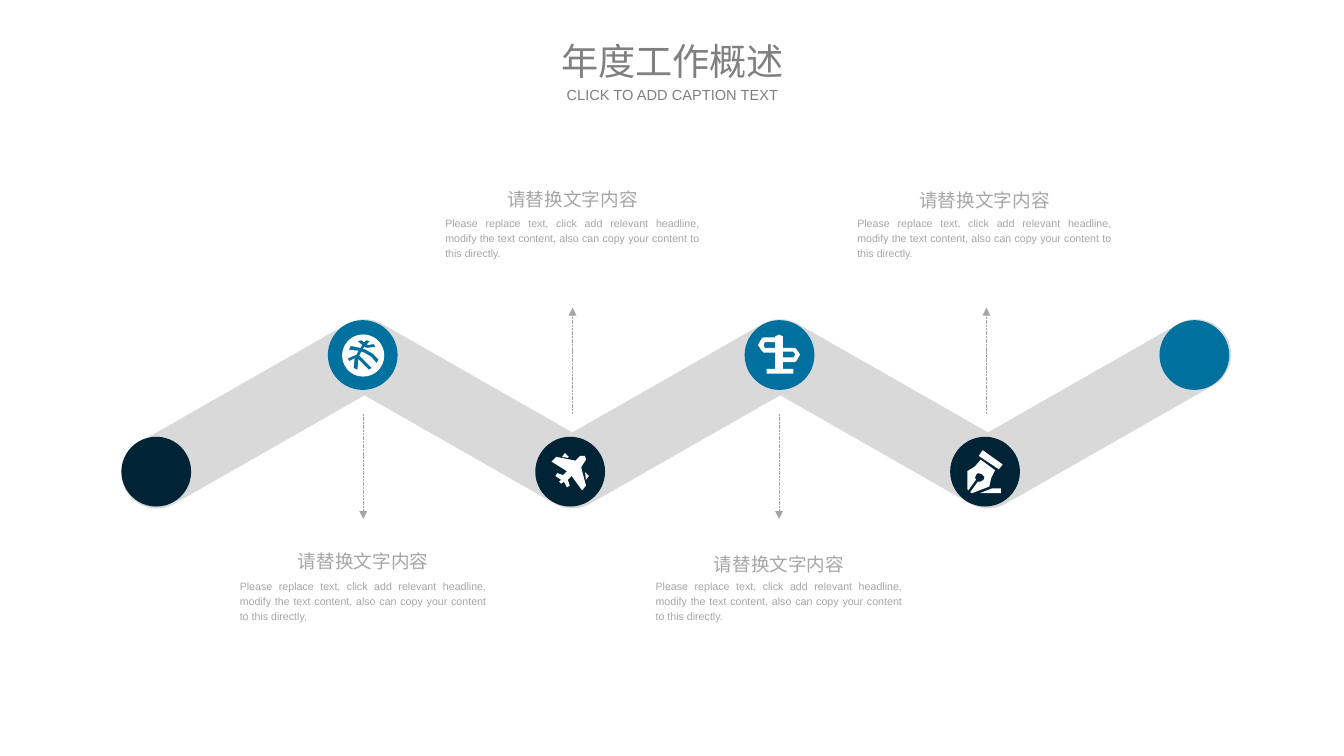
import math

import lxml.etree
import pptx
import pptx.dml.color
import pptx.enum.dml
import pptx.enum.shapes
import pptx.enum.text
import pptx.oxml.ns
import pptx.util

PX = 9144  # EMU per px, 100 px to the inch

RGBColor = pptx.dml.color.RGBColor
NAVY = RGBColor(0x00, 0x24, 0x36)
BLUE = RGBColor(0x00, 0x70, 0x9F)
BAND_GRAY = RGBColor(0xD9, 0xD9, 0xD9)
TEXT_GRAY = RGBColor(0xA6, 0xA6, 0xA6)
TITLE_GRAY = RGBColor(0x80, 0x80, 0x80)
WHITE = RGBColor(0xFF, 0xFF, 0xFF)

CENTER = pptx.enum.text.PP_ALIGN.CENTER
JUSTIFY = pptx.enum.text.PP_ALIGN.JUSTIFY

HEADING = "请替换文字内容"
BODY = ("Please replace text, click add relevant headline, modify the text "
        "content, also can copy your content to this directly.")

# Road: nodes alternate between low and high
FIRST_X, LAST_X, NODES = 164, 1251, 6
LOW_Y, HIGH_Y, RADIUS = 495, 371, 37

# Discs: left, top, colour
DISC = 73
DISCS = [(127, 457, NAVY), (343, 335, BLUE), (560, 457, NAVY),
         (779, 335, BLUE), (994, 457, NAVY), (1213, 335, BLUE)]

# Callouts: centre, arrow x, arrow end, heading top, body top, body width
CALLOUTS = [(380, 380, 543, 566, 599, 278), (815, 815, 543, 569, 599, 278),
            (599, 599, 322, 187, 219, 286), (1030, 1032, 322, 188, 219, 286)]
ARROW_START = 433

# Icons: each one is a list of closed contours
BALL_SEAMS = [
    (367, 362), (365, 366), (375, 367), (373, 371), (364, 375), (365, 378),
    (371, 375), (370, 385), (374, 387), (375, 376), (380, 381), (386, 387),
    (389, 385), (383, 379), (376, 372), (378, 368), (381, 369), (388, 373),
    (394, 380), (396, 376), (390, 370), (383, 366), (380, 365), (381, 363),
    (384, 364), (393, 363), (391, 360), (385, 361), (384, 360), (387, 357),
    (383, 356), (381, 358), (378, 356), (374, 357), (379, 361), (377, 364)]
SIGNPOST = [
    [(811, 358), (800, 358), (799, 361), (800, 364), (811, 364)],
    [(819, 364), (831, 364), (833, 365), (837, 371), (833, 378), (831, 379),
     (819, 379), (819, 386), (830, 386), (830, 391), (802, 391), (802, 386),
     (811, 386), (811, 369), (799, 369), (797, 367), (793, 361), (797, 354),
     (799, 353), (811, 353), (811, 352), (815, 350), (819, 352)],
    [(830, 368), (819, 368), (819, 374), (830, 374), (832, 371)]]
PLANE = [
    [(612, 477), (613, 481), (609, 487), (608, 489), (613, 508), (609, 513),
     (598, 498), (594, 502), (596, 508), (593, 510), (590, 504), (587, 506),
     (585, 504), (587, 502), (581, 498), (583, 495), (589, 497), (593, 493),
     (577, 483), (582, 478), (602, 482), (607, 477)],
    [(616, 498), (612, 494), (613, 502)],
    [(591, 474), (588, 478), (594, 479), (595, 478)]]
PEN = [
    [(1013, 513), (1012, 512), (1012, 493), (1020, 488), (1026, 481),
     (1041, 492), (1037, 500), (1035, 509), (1017, 516), (1015, 515),
     (1023, 504), (1026, 504), (1029, 502), (1030, 499), (1027, 496),
     (1023, 495), (1021, 497), (1020, 500), (1021, 502)],
    [(1025, 516), (1047, 516), (1047, 511), (1038, 511)],
    [(1045, 491), (1049, 486), (1028, 471), (1024, 477)]]


def px(n):
    return pptx.util.Emu(round(n * PX))


def paint(sp, color):
    sp.shadow.inherit = False
    sp.fill.solid()
    sp.fill.fore_color.rgb = color
    sp.line.fill.background()


def add_outline(s, contours, color):
    fb = None
    for contour in contours:
        points = [(px(x), px(y)) for x, y in contour]
        if fb is None:
            fb = s.shapes.build_freeform(*points[0], scale=1.0)
        else:
            fb.move_to(*points[0])
        fb.add_line_segments(points[1:], close=True)
    paint(fb.convert_to_shape(), color)


def arc(x, y, r, start, end):
    steps = max(8, round(abs(end - start) / 6))
    angles = [math.radians(start + (end - start) * i / steps)
              for i in range(steps + 1)]
    return [(x + r * math.cos(t), y + r * math.sin(t)) for t in angles]


def band_points():
    step = (LAST_X - FIRST_X) / (NODES - 1)
    nodes = [(FIRST_X + i * step, HIGH_Y if i % 2 else LOW_Y)
             for i in range(NODES)]
    slope = math.atan2(LOW_Y - HIGH_Y, step)
    a = math.degrees(slope)
    inner = RADIUS / math.cos(slope)
    upper, lower = [], []
    for x, y in nodes[1:-1]:
        if y == HIGH_Y:
            upper += arc(x, y, RADIUS, 270 - a, 270 + a)
            lower.append((x, y + inner))
        else:
            upper.append((x, y - inner))
            lower += arc(x, y, RADIUS, 90 + a, 90 - a)
    return (arc(*nodes[0], RADIUS, 90 - a, 270 - a) + upper
            + arc(*nodes[-1], RADIUS, 270 - a, 450 - a) + lower[::-1])


def add_disc(s, x, y, color):
    kind = pptx.enum.shapes.MSO_SHAPE.ROUNDED_RECTANGLE
    sp = s.shapes.add_shape(kind, px(x), px(y), px(DISC), px(DISC))
    sp.adjustments[0] = 0.5
    paint(sp, color)


def add_arrow(s, x, y1, y2):
    kind = pptx.enum.shapes.MSO_CONNECTOR.STRAIGHT
    cx = s.shapes.add_connector(kind, px(x), px(y1), px(x), px(y2))
    cx.line.color.rgb = TEXT_GRAY
    cx.line.width = pptx.util.Pt(0.5)
    cx.line.dash_style = pptx.enum.dml.MSO_LINE.SQUARE_DOT
    qn = pptx.oxml.ns.qn
    ln = cx.line._get_or_add_ln()
    lxml.etree.SubElement(ln, qn("a:tailEnd"), type="triangle")
    lxml.etree.SubElement(cx._element.spPr, qn("a:effectLst"))


def add_text(s, text, x, y, w, h, size, color, align=CENTER, spacing=None,
             wrap=True, inset=True, middle=False):
    sp = s.shapes.add_textbox(px(x), px(y), px(w), px(h))
    tf = sp.text_frame
    tf.word_wrap = wrap
    tf.auto_size = pptx.enum.text.MSO_AUTO_SIZE.SHAPE_TO_FIT_TEXT
    if not inset:
        tf.margin_left = tf.margin_right = tf.margin_top = tf.margin_bottom = 0
    if middle:
        tf.vertical_anchor = pptx.enum.text.MSO_ANCHOR.MIDDLE
    p = tf.paragraphs[0]
    p.alignment = align
    p.line_spacing = spacing
    r = p.add_run()
    r.text = text
    r.font.name = "Arial"
    r.font.size = pptx.util.Pt(size)
    r.font.color.rgb = color


def main():
    prs = pptx.Presentation()
    prs.slide_width, prs.slide_height = px(1406), px(791)
    s = prs.slides.add_slide(prs.slide_layouts[6])

    # Zigzag road with its discs
    add_outline(s, [band_points()], BAND_GRAY)
    for x, y, color in DISCS:
        add_disc(s, x, y, color)

    # Icons
    ball = [arc(380, 372, 22, 0, 354), BALL_SEAMS]
    for icon in (ball, SIGNPOST, PLANE, PEN):
        add_outline(s, icon, WHITE)

    # Callouts
    for cx, arrow_x, arrow_end, head_y, body_y, body_w in CALLOUTS:
        add_arrow(s, arrow_x, ARROW_START, arrow_end)
        add_text(s, HEADING, cx - 79, head_y, 158, 36, 14, TEXT_GRAY,
                 spacing=1.2, wrap=False)
        add_text(s, BODY, cx - body_w / 2, body_y, body_w, 57, 8, TEXT_GRAY,
                 align=JUSTIFY, spacing=1.2)

    # Title and caption
    add_text(s, "年度工作概述", 577, 39, 253, 49, 28, TITLE_GRAY,
             inset=False, middle=True)
    add_text(s, "CLICK TO ADD CAPTION TEXT", 577, 90, 253, 19, 11, TITLE_GRAY,
             inset=False, middle=True)

    prs.save("out.pptx")


if __name__ == "__main__":
    main()
